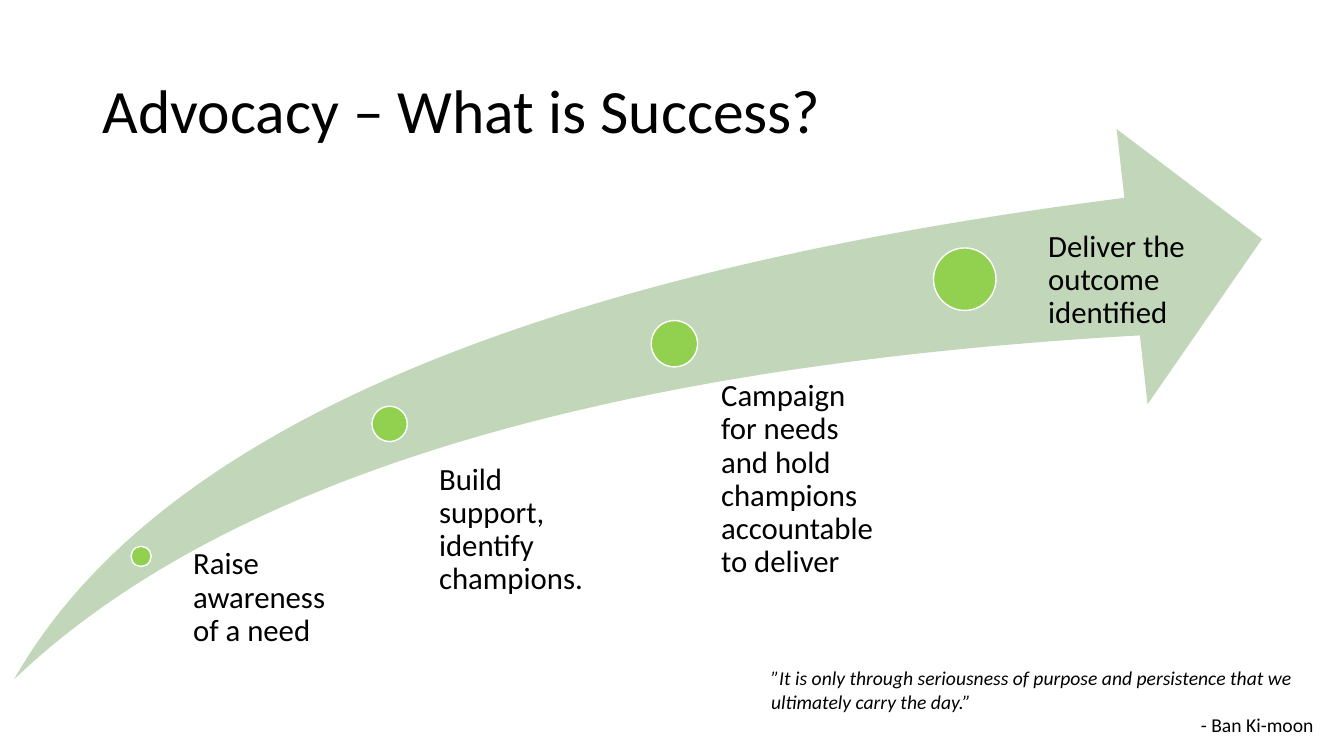
from pptx import Presentation
from pptx.dml.color import RGBColor
from pptx.enum.shapes import MSO_SHAPE
from pptx.enum.text import MSO_ANCHOR, PP_ALIGN
from pptx.util import Inches, Pt

SWOOSH = MSO_SHAPE.SWOOSH_ARROW
OVAL = MSO_SHAPE.OVAL
MIDDLE = MSO_ANCHOR.MIDDLE
RIGHT = PP_ALIGN.RIGHT

deck = Presentation()
deck.slide_width = Inches(13.333)
deck.slide_height = Inches(7.5)
slide = deck.slides.add_slide(deck.slide_layouts[6])

# One hundredth of the slide's width and height
COL = deck.slide_width / 100
ROW = deck.slide_height / 100


def add_part(kind, left, top, width, height, fill=None):
    """Add a filled shape, or a wrapping text box if kind is None; lengths in EMU."""
    box = [round(v) for v in (left, top, width, height)]
    if kind is None:
        part = slide.shapes.add_textbox(*box)
        part.text_frame.word_wrap = True
        return part
    part = slide.shapes.add_shape(kind, *box)
    part.shadow.inherit = False
    part.fill.solid()
    part.fill.fore_color.rgb = RGBColor.from_string(fill)
    part.line.fill.background()
    return part


def add_run(para, text, size, italic=False):
    run = para.add_run()
    run.text = text
    run.font.name = "Calibri"
    run.font.size = Pt(size)
    run.font.italic = italic
    run.font.color.rgb = RGBColor.from_string("000000")


# Title
title = add_part(None, 6.9 * COL, 5.33 * ROW, 86.25 * COL, 19.33 * ROW).text_frame
title.vertical_anchor = MIDDLE
title.paragraphs[0].line_spacing = 0.9
add_run(title.paragraphs[0], "Advocacy – What is Success?", 44)

# Rising arrow
arrow = add_part(SWOOSH, 1.05 * COL, 17.07 * ROW, 92.85 * COL, 72.8 * ROW, "C2D7B9")
arrow.adjustments[0] = 0.25
arrow.adjustments[1] = 0.25

# Steps: dot centre and diameter, then label box and wording
steps = [
    (10.5, 73.6, 1.5, (13.58, 72.53, 11.18, 17.33),
     "Raise awareness of a need"),
    (28.99, 56.07, 2.63, (31.28, 61.33, 13.73, 18),
     "Build support, identify champions."),
    (50.18, 45.47, 3.45, (51.83, 50.27, 13.73, 36.8),
     "Campaign for needs and hold champions accountable to deliver"),
    (71.78, 36.93, 4.65, (75.53, 30.53, 13.73, 52.27),
     "Deliver the outcome identified"),
]
for x, y, size, (left, top, width, height), words in steps:
    span = size * COL
    dot = add_part(OVAL, x * COL - span / 2, y * ROW - span / 2, span, span, "92D050")
    dot.line.color.rgb = RGBColor.from_string("FFFFFF")
    dot.line.width = Pt(1)

    label = add_part(None, left * COL, top * ROW, width * COL, height * ROW).text_frame
    label.margin_left = round(0.53 * span)
    label.margin_top = label.margin_right = label.margin_bottom = 0
    label.paragraphs[0].line_spacing = 0.9
    add_run(label.paragraphs[0], words, 22)

# Quote
quote = add_part(None, 56.63 * COL, 87.47 * ROW, 41.85 * COL, 10.8 * ROW).text_frame
add_run(quote.paragraphs[0],
        "”It is only through seriousness of purpose and persistence "
        "that we ultimately carry the day.”", 14, True)
credit = quote.add_paragraph()
credit.alignment = RIGHT
add_run(credit, "- Ban Ki-moon", 14)

deck.save("out.pptx")
